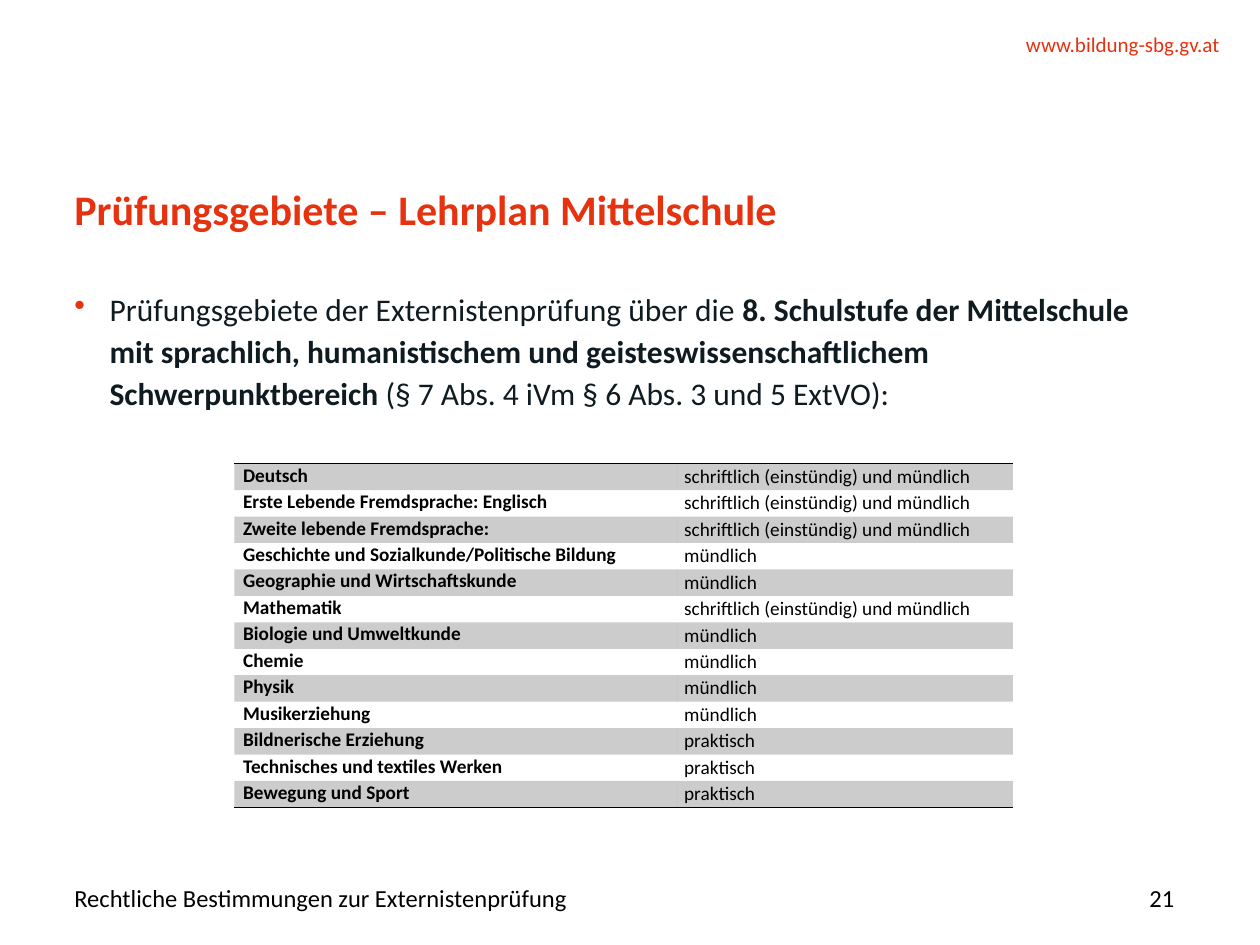
from lxml.etree import SubElement
from pptx import Presentation
from pptx.dml.color import RGBColor
from pptx.enum.text import MSO_ANCHOR as Anchor, PP_ALIGN as Align
from pptx.oxml import parse_xml
from pptx.oxml.ns import nsdecls, qn
from pptx.util import Inches, Pt

RED, INK, BLACK = "E6320F", "0F1B20", "000000"
FONT = "Calibri"
LEFT, WIDTH = 0.59, 8.73
FOOTER_TOP, FOOTER_HEIGHT = 6.98, 0.29

WEB_ADDRESS = "www.bildung-sbg.gv.at"
TITLE = "Prüfungsgebiete – Lehrplan Mittelschule"
INTRO = [
    ("Prüfungsgebiete der Externistenprüfung über die ", False),
    ("8. Schulstufe der Mittelschule mit sprachlich, humanistischem und "
     "geisteswissenschaftlichem Schwerpunktbereich ", True),
    ("(§ 7 Abs. 4 iVm § 6 Abs. 3 und 5 ExtVO):", False),
]
FOOTER, PAGE_NUMBER = "Rechtliche Bestimmungen zur Externistenprüfung", "21"

WRITTEN, ORAL, PRACTICAL = "schriftlich (einstündig) und mündlich", "mündlich", "praktisch"
SUBJECTS = [
    ("Deutsch", WRITTEN),
    ("Erste Lebende Fremdsprache: Englisch", WRITTEN),
    ("Zweite lebende Fremdsprache:", WRITTEN),
    ("Geschichte und Sozialkunde/Politische Bildung", ORAL),
    ("Geographie und Wirtschaftskunde", ORAL),
    ("Mathematik", WRITTEN),
    ("Biologie und Umweltkunde", ORAL),
    ("Chemie", ORAL),
    ("Physik", ORAL),
    ("Musikerziehung", ORAL),
    ("Bildnerische Erziehung", PRACTICAL),
    ("Technisches und textiles Werken", PRACTICAL),
    ("Bewegung und Sport", PRACTICAL),
]
TABLE_LEFT, TABLE_TOP, ROW_HEIGHT = 1.86, 3.68, 0.21
COLUMN_WIDTHS = (3.52, 2.66)
CELL_INSETS = ((0.07, 0), (0.05, 0.01))
PLAIN_STYLE = "{2D5ABB26-0587-4C30-8999-92F81FD0307C}"


def color(hex_text):
    return RGBColor.from_string(hex_text)


def add_runs(para, runs, size, hex_text):
    for text, bold in runs:
        span = para.add_run()
        span.text = text
        font = span.font
        font.name, font.size, font.bold = FONT, Pt(size), bold
        font.color.rgb = color(hex_text)


def add_text(page, area, runs, size, hex_text, align=Align.LEFT, anchor=Anchor.TOP):
    box = page.shapes.add_textbox(*map(Inches, area))
    frame = box.text_frame
    frame.word_wrap, frame.vertical_anchor = True, anchor
    frame.margin_left = frame.margin_right = frame.margin_top = frame.margin_bottom = 0
    para = frame.paragraphs[0]
    para.alignment = align
    add_runs(para, runs, size, hex_text)
    return para


def add_bullet(para, indent, hex_text):
    props = para._p.get_or_add_pPr()
    props.set("marL", str(Inches(indent)))
    props.set("indent", str(-Inches(indent)))
    SubElement(SubElement(props, qn("a:buClr")), qn("a:srgbClr")).set("val", hex_text)
    SubElement(props, qn("a:buChar")).set("char", "•")


def shade(cell, hex_text, percent):
    cell.fill.solid()
    cell.fill.fore_color.rgb = color(hex_text)
    tint = cell._tc.tcPr.find(".//" + qn("a:srgbClr"))
    SubElement(tint, qn("a:alpha")).set("val", str(percent * 1000))


def add_rule(cell, side, hex_text):
    cell._tc.get_or_add_tcPr().insert(0, parse_xml(
        f'<a:{side} {nsdecls("a")} w="{Pt(1)}"><a:solidFill>'
        f'<a:srgbClr val="{hex_text}"/></a:solidFill></a:{side}>'))


def add_subject_table(page):
    last = len(SUBJECTS) - 1
    area = (TABLE_LEFT, TABLE_TOP, sum(COLUMN_WIDTHS), ROW_HEIGHT * len(SUBJECTS))
    table = page.shapes.add_table(len(SUBJECTS), 2, *map(Inches, area)).table
    table.first_row = table.horz_banding = False
    table._tbl.tblPr.find(qn("a:tableStyleId")).text = PLAIN_STYLE
    for column, width in zip(table.columns, COLUMN_WIDTHS):
        column.width = Inches(width)
    for row, texts in enumerate(SUBJECTS):
        table.rows[row].height = Inches(ROW_HEIGHT)
        for col, (text, (side, top)) in enumerate(zip(texts, CELL_INSETS)):
            cell = table.cell(row, col)
            cell.margin_left = cell.margin_right = Inches(side)
            cell.margin_top = cell.margin_bottom = Inches(top)
            para = cell.text_frame.paragraphs[0]
            para.alignment = Align.JUSTIFY
            add_runs(para, [(text, col == 0)], 11, BLACK)
            if row % 2 == 0:
                shade(cell, BLACK, 20)
            else:
                cell.fill.background()
            if row == 0:
                add_rule(cell, "lnT", BLACK)
            if row == last:
                add_rule(cell, "lnB", BLACK)


def main():
    """Build the slide of examination subjects and save it."""
    deck = Presentation()
    deck.slide_width, deck.slide_height = Inches(10), Inches(7.5)
    page = deck.slides.add_slide(deck.slide_layouts[6])

    add_text(page, (7.27, 0.25, 2.41, 0.2), [(WEB_ADDRESS, False)], 12, RED, Align.RIGHT)
    title = add_text(page, (LEFT, 1.44, WIDTH, 0.91), [(TITLE, True)], 24, RED)
    title.line_spacing = Pt(30)

    intro = add_text(page, (LEFT, 2.27, WIDTH, 4.29), INTRO, 18, INK)
    add_bullet(intro, 0.28, RED)
    intro.line_spacing, intro.space_after = Pt(24), Pt(14.2)

    add_text(page, (LEFT, FOOTER_TOP, 7.52, FOOTER_HEIGHT), [(FOOTER, False)],
             14, BLACK, anchor=Anchor.MIDDLE)
    number_width = 0.89
    add_text(page, (LEFT + WIDTH - number_width, FOOTER_TOP, number_width, FOOTER_HEIGHT),
             [(PAGE_NUMBER, False)], 14, BLACK, Align.RIGHT, Anchor.MIDDLE)
    add_subject_table(page)
    deck.save("out.pptx")


if __name__ == "__main__":
    main()
